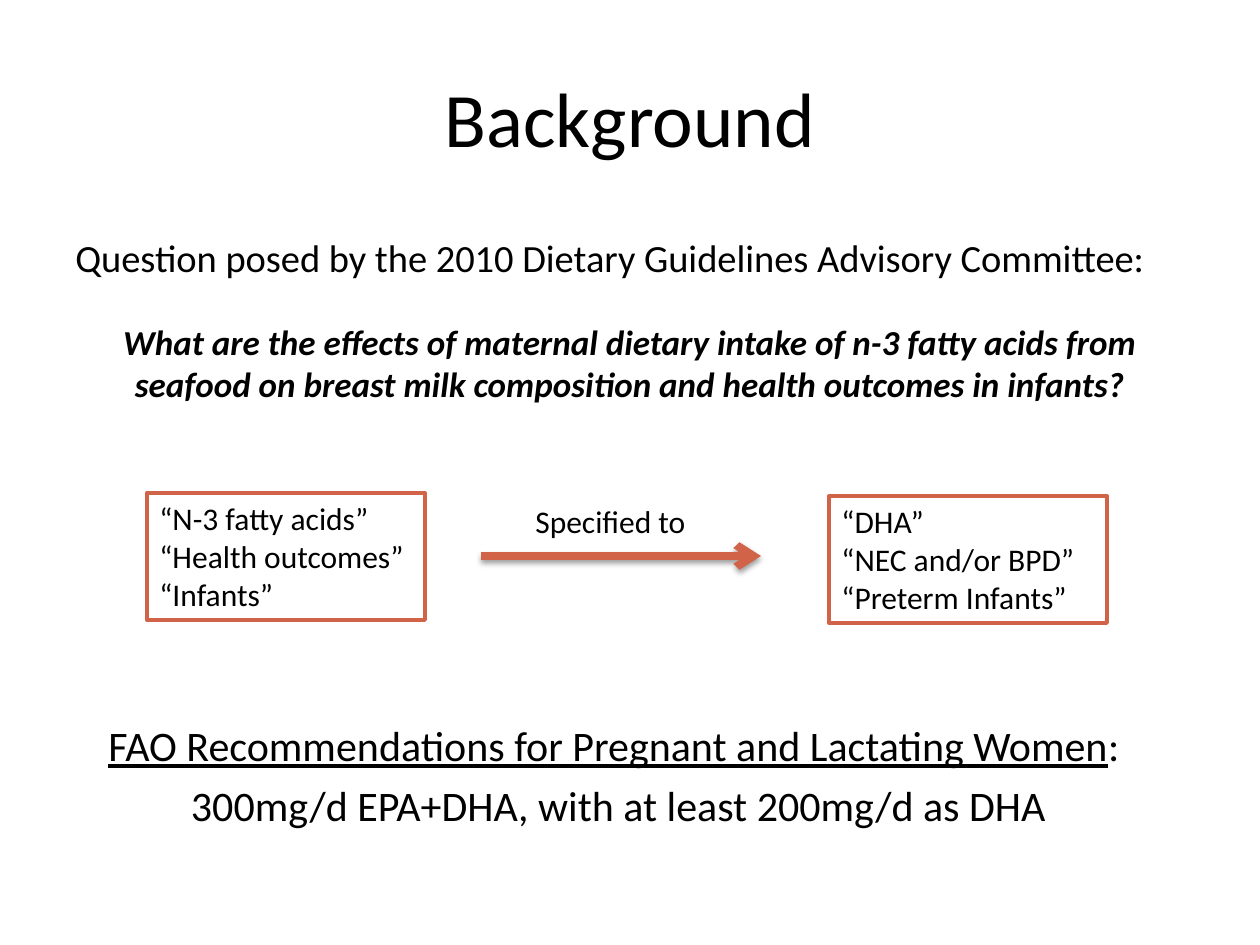
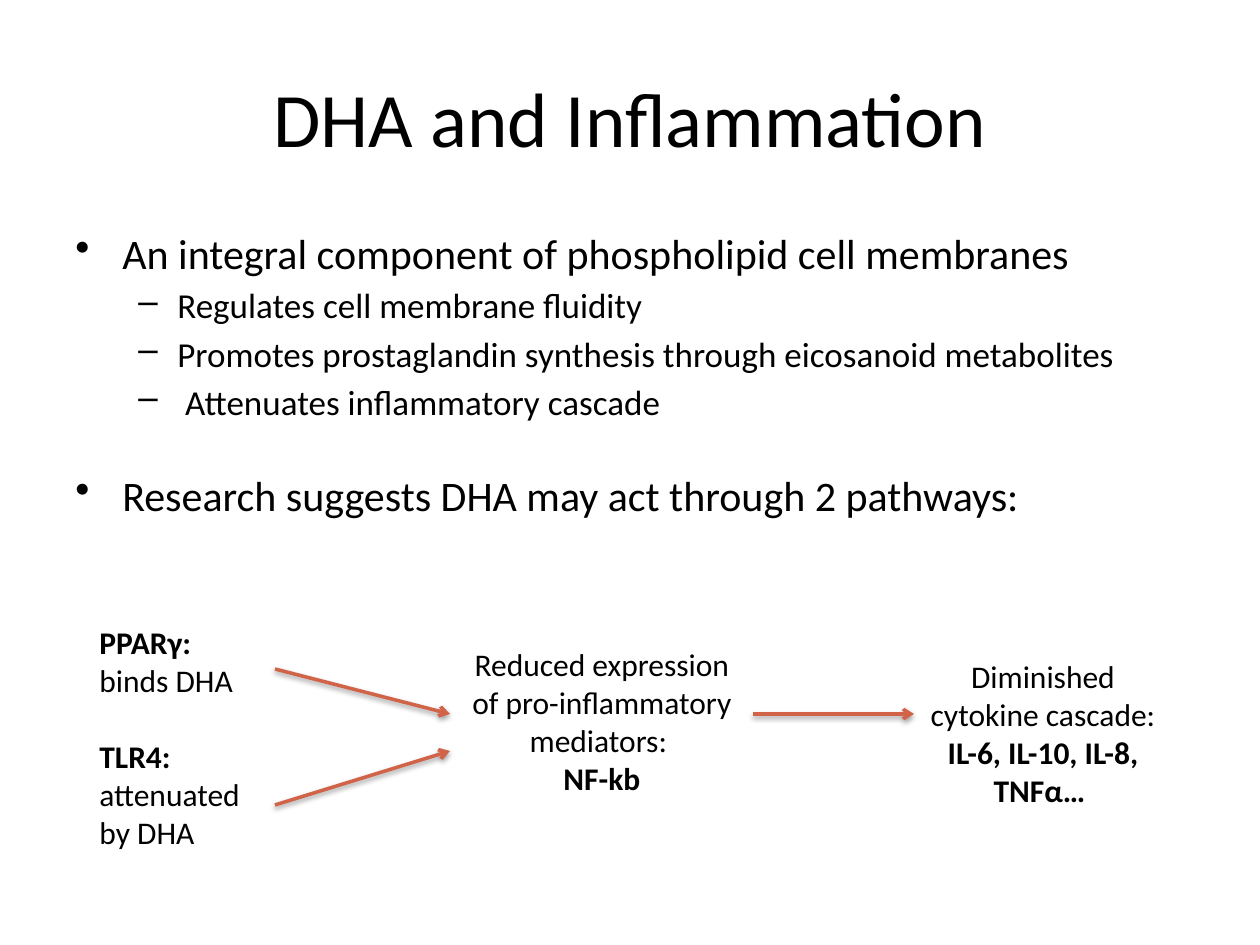
from typing import NamedTuple

from pptx import Presentation
from pptx.dml.color import RGBColor
from pptx.enum.shapes import MSO_CONNECTOR, MSO_SHAPE
from pptx.enum.text import MSO_ANCHOR, PP_ALIGN
from pptx.oxml import parse_xml
from pptx.oxml.ns import nsdecls
from pptx.util import Emu, Pt

EMU_PER_PX = 914400 / 126
COLORS = {"text": "000000", "paper": "FFFFFF", "accent": "D16349", "shadow": "000000"}
FONT = "Calibri"
BOLD = {"bold": True}
CENTERED = {"alignment": PP_ALIGN.CENTER}
BULLETS = {0: ("•", 47, 47), 1: ("–", 102, 39)}


class Line(NamedTuple):
    """One paragraph: its text or (text, font) parts, and its format values."""
    text: object
    font: dict = {}
    layout: dict = {}
    bulleted: bool = False


def px(length):
    """Turn pixels into EMU."""
    return Emu(round(length * EMU_PER_PX))


def color(name):
    """Look up a colour by its role."""
    return RGBColor.from_string(COLORS[name])


def apply(target, values):
    """Set each named value on the target."""
    for name, value in values.items():
        setattr(target, name, value)


def add_bullet(paragraph, level):
    """Give a paragraph the bullet and hanging indent of its level."""
    mark, margin, hang = BULLETS[level]
    properties = paragraph._p.get_or_add_pPr()
    properties.set("marL", str(px(margin)))
    properties.set("indent", str(-px(hang)))
    properties.append(parse_xml(f'<a:buChar {nsdecls("a")} char="{mark}"/>'))


def write(frame, lines, size, anchor=MSO_ANCHOR.TOP):
    """Fill a text frame with lines."""
    apply(frame, {"word_wrap": True, "vertical_anchor": anchor})
    for index, line in enumerate(lines):
        paragraph = frame.add_paragraph() if index else frame.paragraphs[0]
        if line.bulleted:
            add_bullet(paragraph, line.layout.get("level", 0))
        apply(paragraph, {"alignment": PP_ALIGN.LEFT, **line.layout})
        parts = [(line.text, {})] if isinstance(line.text, str) else line.text
        for text, part_font in parts:
            run = paragraph.add_run()
            run.text = text
            apply(run.font, {"name": FONT, "size": Pt(size), **line.font, **part_font})
            run.font.color.rgb = color("text")


def add_text(slide, box, lines, size=18, anchor=MSO_ANCHOR.TOP):
    """Add plain text in a box of left, top, width and height."""
    write(slide.shapes.add_textbox(*map(px, box)).text_frame, lines, size, anchor)


def add_term_box(slide, left, top, terms):
    """Add an outlined box that lists terms."""
    term_box = slide.shapes.add_shape(MSO_SHAPE.RECTANGLE, *map(px, (left, top, 278, 127)))
    term_box.shadow.inherit = False
    term_box.fill.solid()
    term_box.fill.fore_color.rgb = color("paper")
    term_box.line.color.rgb = color("accent")
    term_box.line.width = Pt(2.25)
    write(term_box.text_frame, [Line(term) for term in terms], 18)


def add_arrow(slide, start, end, width=2):
    """Add an arrow with a soft shadow below it."""
    arrow = slide.shapes.add_connector(MSO_CONNECTOR.STRAIGHT, *map(px, start + end))
    arrow.line.color.rgb = color("accent")
    arrow.line.width = Pt(width)
    arrow.line._get_or_add_ln().append(
        parse_xml(f'<a:tailEnd {nsdecls("a")} type="arrow"/>'))
    arrow._element.spPr.append(parse_xml(
        f'<a:effectLst {nsdecls("a")}>'
        '<a:outerShdw blurRad="40000" dist="20000" dir="5400000" rotWithShape="0">'
        f'<a:srgbClr val="{COLORS["shadow"]}"><a:alpha val="38000"/></a:srgbClr>'
        '</a:outerShdw></a:effectLst>'))


def add_titled_slide(deck, title):
    """Add a blank slide with the shared title style."""
    slide = deck.slides.add_slide(deck.slide_layouts[6])
    add_text(slide, (63, 38, 1134, 158), [Line(title, layout=CENTERED)], 44, MSO_ANCHOR.MIDDLE)
    return slide


def build_background(deck):
    """Build the slide on the research question."""
    slide = add_titled_slide(deck, "Background")
    add_text(slide, (63, 228, 1134, 221), [
        Line("Question posed by the 2010 Dietary Guidelines Advisory Committee:",
             {"size": Pt(22)}),
        Line("What are the effects of maternal dietary intake of n-3 fatty acids from "
             "seafood on breast milk composition and health outcomes in infants?",
             {"bold": True, "italic": True}, {**CENTERED, "space_before": Pt(23)}),
    ], 20)
    add_term_box(slide, 147, 493, ["“N-3 fatty acids”", "“Health outcomes”", "“Infants”"])
    add_arrow(slide, (481, 556), (761, 556), 4.5)
    add_text(slide, (523, 496, 199, 50), [Line("Specified to")])
    add_term_box(slide, 829, 496, ["“DHA”", "“NEC and/or BPD”", "“Preterm Infants”"])
    spread = {"line_spacing": 1.2}
    add_text(slide, (96, 703, 1045, 134), [
        Line([("FAO Recommendations for Pregnant and Lactating Women", {"underline": True}),
              (":", {})], layout=spread),
        Line("300mg/d EPA+DHA, with at least 200mg/d as DHA", layout={**CENTERED, **spread}),
    ], 24)


def build_inflammation(deck):
    """Build the slide on the two pathways."""
    slide = add_titled_slide(deck, "DHA and Inflammation")
    effects = ["Regulates cell membrane fluidity",
               "Promotes prostaglandin synthesis through eicosanoid metabolites",
               " Attenuates inflammatory cascade"]
    add_text(slide, (63, 221, 1134, 355), [
        Line("An integral component of phospholipid cell membranes", bulleted=True),
        *[Line(effect, {"size": Pt(20)}, {"level": 1, "space_before": Pt(3.6)}, True)
          for effect in effects],
        Line("Research suggests DHA may act through 2 pathways:",
             layout={"space_before": Pt(27)}, bulleted=True),
    ], 24)
    add_text(slide, (87, 617, 294, 280), [
        Line("PPARγ:", BOLD),
        Line("binds DHA"),
        Line("TLR4:", BOLD, {"space_before": Pt(22)}),
        Line("attenuated"),
        Line("by DHA"),
    ])
    outcomes = [
        ((450, 639, 304, 165), "Reduced expression of pro-inflammatory mediators: ", "NF-kb"),
        ((914, 651, 258, 165), "Diminished cytokine cascade:", "IL-6, IL-10, IL-8, TNFα… "),
    ]
    for box, outcome, markers in outcomes:
        add_text(slide, box, [Line(outcome, layout=CENTERED), Line(markers, BOLD, CENTERED)])
    for start, end in [((275, 669), (450, 714)), ((275, 805), (450, 751)),
                       ((753, 714), (914, 714))]:
        add_arrow(slide, start, end)


def main():
    """Build and save the deck."""
    deck = Presentation()
    apply(deck, {"slide_width": px(1260), "slide_height": px(945)})
    build_background(deck)
    build_inflammation(deck)
    deck.save("out.pptx")


if __name__ == "__main__":
    main()
